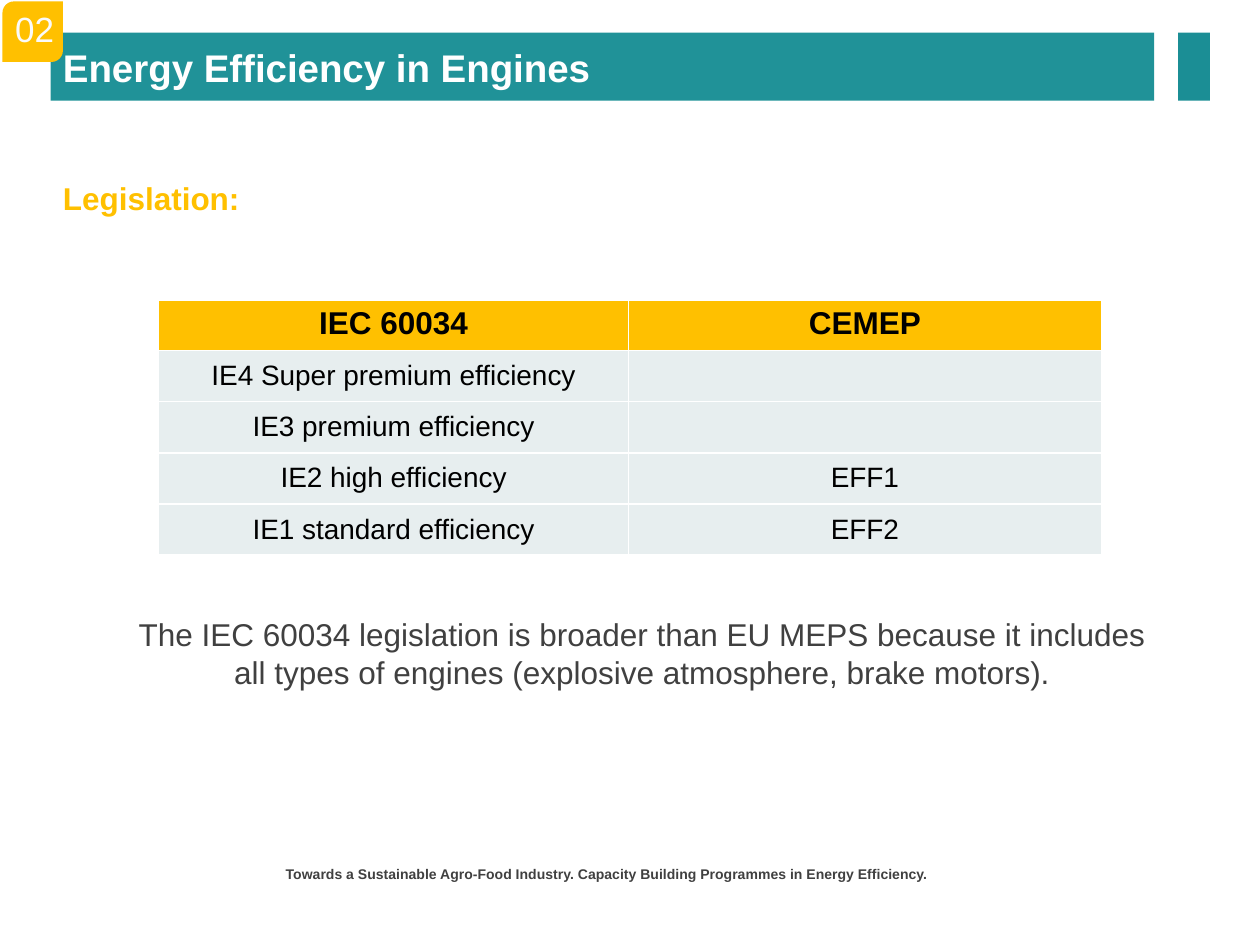
"""Build the slide on engine efficiency legislation."""
from dataclasses import dataclass

from lxml import etree
from pptx import Presentation
from pptx import util as u
from pptx.dml.color import RGBColor
from pptx.enum import shapes, text
from pptx.oxml.ns import qn

WHITE = RGBColor(0xFF, 0xFF, 0xFF)
OFF_WHITE = RGBColor(0xFA, 0xFA, 0xFA)
BLACK = RGBColor(0, 0, 0)
GREY = RGBColor(0x40, 0x40, 0x40)
AMBER = RGBColor(0xFF, 0xC0, 0x00)
TEAL = RGBColor(0x20, 0x92, 0x98)
DEEP_TEAL = RGBColor(0x1B, 0x8E, 0x95)
PALE = RGBColor(0xE7, 0xEE, 0xEF)

LEFT, CENTER, JUSTIFY = text.PP_ALIGN.LEFT, text.PP_ALIGN.CENTER, text.PP_ALIGN.JUSTIFY
TOP, MIDDLE = text.MSO_ANCHOR.TOP, text.MSO_ANCHOR.MIDDLE
RECT = shapes.MSO_SHAPE.RECTANGLE
BADGE = shapes.MSO_SHAPE.ROUND_2_DIAG_RECTANGLE


@dataclass(frozen=True)
class Wording:
    text: str
    size: float
    color: RGBColor
    bold: bool = False
    align: text.PP_ALIGN = LEFT
    spacing: float = 1.0


@dataclass(frozen=True)
class Area:
    left: float
    top: float
    width: float
    height: float

    def lengths(self) -> tuple:
        return u.Cm(self.left), u.Cm(self.top), u.Cm(self.width), u.Cm(self.height)


def write(frame, wording: Wording) -> None:
    paragraph = frame.paragraphs[0]
    paragraph.alignment = wording.align
    paragraph.line_spacing = wording.spacing
    run = paragraph.add_run()
    run.text = wording.text
    run.font.name = "Arial"
    run.font.size = u.Pt(wording.size)
    run.font.bold = wording.bold
    run.font.color.rgb = wording.color


def add_label(slide, area: Area, wording: Wording, wrap: bool = True) -> None:
    frame = slide.shapes.add_textbox(*area.lengths()).text_frame
    frame.word_wrap = wrap
    write(frame, wording)


def add_block(slide, kind: shapes.MSO_SHAPE, area: Area, color: RGBColor):
    block = slide.shapes.add_shape(kind, *area.lengths())
    block.shadow.inherit = False
    block.fill.solid()
    block.fill.fore_color.rgb = color
    block.line.fill.background()
    return block


def add_borders(cell) -> None:
    properties = cell._tc.get_or_add_tcPr()
    for position, side in enumerate(("a:lnL", "a:lnR", "a:lnT", "a:lnB")):
        border = etree.Element(qn(side), w=str(u.Pt(1)))
        fill = etree.SubElement(border, qn("a:solidFill"))
        etree.SubElement(fill, qn("a:srgbClr"), val=str(WHITE))
        properties.insert(position, border)


def fill_cell(cell, wording: Wording, color: RGBColor, anchor: text.MSO_ANCHOR) -> None:
    cell.fill.solid()
    cell.fill.fore_color.rgb = color
    cell.vertical_anchor = anchor
    add_borders(cell)
    if wording.text:
        write(cell.text_frame, wording)


def add_classes(slide) -> None:
    classes = [
        ("IEC 60034", "CEMEP"),
        ("IE4 Super premium efficiency", ""),
        ("IE3 premium efficiency", ""),
        ("IE2 high efficiency", "EFF1"),
        ("IE1 standard efficiency", "EFF2"),
    ]
    area = Area(3.2, 6.05, 19, 5.11)
    table = slide.shapes.add_table(len(classes), 2, *area.lengths()).table
    for column, width in zip(table.columns, (9.47, 9.53)):
        column.width = u.Cm(width)
    for index, names in enumerate(classes):
        header = index == 0
        table.rows[index].height = u.Cm(0.99 if header else 1.03)
        for cell, name in zip(table.rows[index].cells, names):
            wording = Wording(name, 18 if header else 16, BLACK, header, CENTER)
            fill_cell(cell, wording, AMBER if header else PALE, TOP if header else MIDDLE)


def main() -> None:
    deck = Presentation()
    deck.slide_width, deck.slide_height = u.Cm(25.4), u.Cm(19.05)
    slide = deck.slides.add_slide(deck.slide_layouts[6])

    add_label(slide, Area(5.51, 17.32, 13.97, 0.53), Wording(
        "Towards a Sustainable Agro-Food Industry. "
        "Capacity Building Programmes in Energy Efficiency.", 8, GREY, True))
    add_label(slide, Area(1.02, 3.1, 23.85, 1.27),
              Wording("Legislation:", 18, AMBER, True, JUSTIFY, 1.5))
    add_label(slide, Area(2.29, 12.27, 21.31, 1.8), Wording(
        "The IEC 60034 legislation is broader than EU MEPS because it includes "
        "all types of engines (explosive atmosphere, brake motors).",
        18, GREY, align=CENTER))

    title = add_block(slide, RECT, Area(1.02, 0.66, 22.25, 1.37), TEAL)
    title.text_frame.vertical_anchor = MIDDLE
    write(title.text_frame, Wording("Energy Efficiency in Engines", 22, WHITE, True))
    add_block(slide, RECT, Area(23.75, 0.66, 0.64, 1.37), DEEP_TEAL)
    badge = add_block(slide, BADGE, Area(0.05, 0.03, 1.22, 1.22), AMBER)
    badge.adjustments[0] = 0.19
    add_label(slide, Area(0.05, 0.03, 1.3, 1.12),
              Wording("02", 20, OFF_WHITE, align=CENTER), wrap=False)

    add_classes(slide)
    deck.save("out.pptx")


if __name__ == "__main__":
    main()
